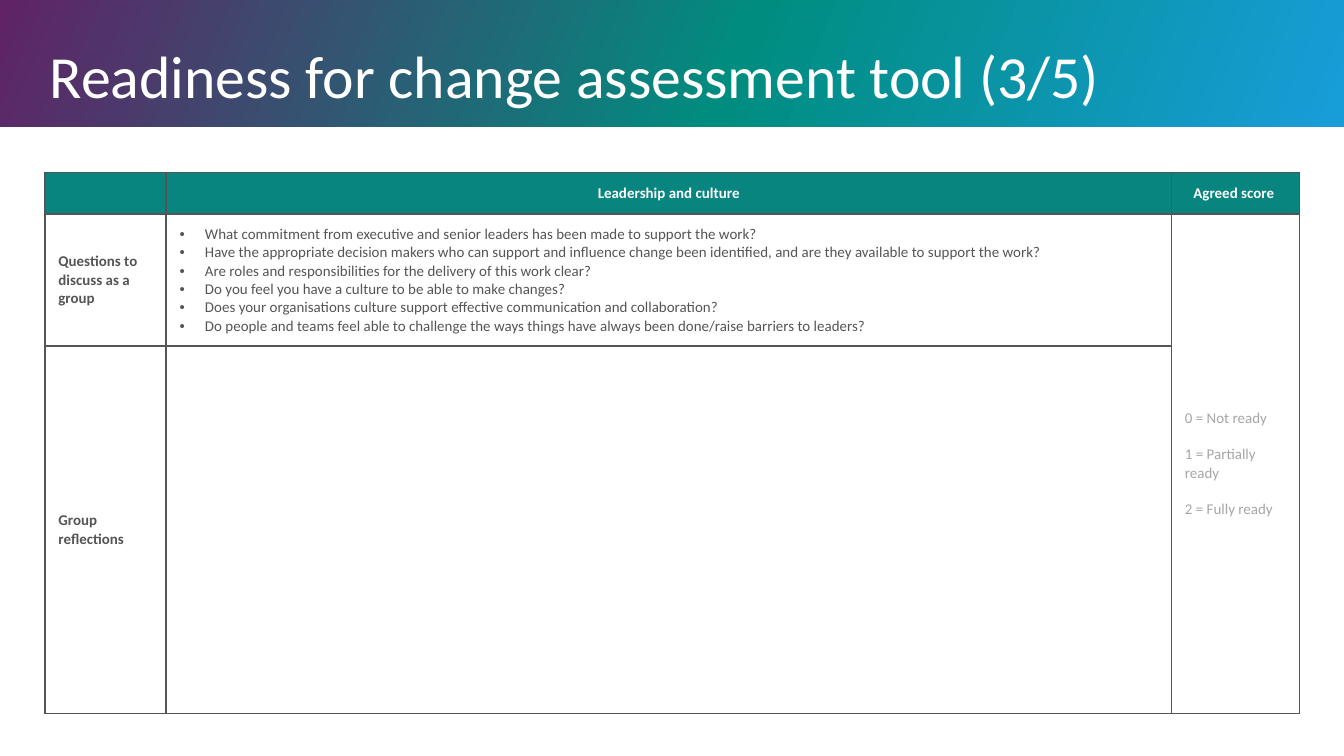
from copy import deepcopy
from lxml.etree import SubElement
from pptx import Presentation
from pptx.dml.color import RGBColor
from pptx.enum.shapes import MSO_SHAPE
from pptx.enum.text import MSO_ANCHOR, MSO_AUTO_SIZE, PP_ALIGN
from pptx.oxml.ns import qn
from pptx.util import Cm, Pt


def color(value):
    return RGBColor.from_string(value)


def fill_cell(cell, lines, text_color, bold=False, alignment=PP_ALIGN.LEFT, bullets=False, gap=0):
    cell.vertical_anchor = MSO_ANCHOR.MIDDLE
    cell.text_frame.text = "\n".join(lines)
    for index, paragraph in enumerate(cell.text_frame.paragraphs):
        paragraph.alignment = alignment
        if index and gap:
            paragraph.space_before = Pt(gap)
        if bullets:
            properties = paragraph._p.get_or_add_pPr()
            properties.set("marL", str(Cm(0.48)))
            properties.set("indent", str(-Cm(0.48)))
            SubElement(properties, qn("a:buFont")).set("typeface", "Arial")
            SubElement(properties, qn("a:buChar")).set("char", "•")
        for run in paragraph.runs:
            run.font.name = "Calibri"
            run.font.size = Pt(8)
            run.font.bold = bold
            run.font.color.rgb = color(text_color)
        if not paragraph.runs:
            SubElement(paragraph._p, qn("a:endParaRPr")).set("sz", "800")


WHITE, GRAY, PALE_GRAY, TEAL = "FFFFFF", "565456", "A6A6A6", "08857E"

presentation = Presentation()
presentation.slide_width = Cm(25.4)
presentation.slide_height = Cm(14.29)
slide = presentation.slides.add_slide(presentation.slide_layouts[5])

title = slide.shapes.title
title.left, title.top, title.width, title.height = Cm(0.94), Cm(0.89), Cm(23.57), Cm(1.04)
title_frame = title.text_frame
title_frame.text = "Readiness for change assessment tool (3/5)"
title_frame.auto_size = MSO_AUTO_SIZE.NONE
title_frame.vertical_anchor = MSO_ANCHOR.MIDDLE
title_frame.margin_left = title_frame.margin_right = 0
title_frame.margin_top = title_frame.margin_bottom = 0
paragraph = title_frame.paragraphs[0]
paragraph.alignment = PP_ALIGN.LEFT
title_font = paragraph.runs[0].font
title_font.name = "Calibri"
title_font.size = Pt(32)
title_font.color.rgb = color(WHITE)

banner = slide.shapes.add_shape(MSO_SHAPE.RECTANGLE, 0, 0, Cm(25.4), Cm(2.4))
banner.shadow.inherit = False
banner.line.fill.background()
banner.fill.gradient()
banner.fill.gradient_angle = 338
stop_list = next(banner.element.iter(qn("a:gsLst")))
stop_list.append(deepcopy(stop_list[0]))
banner_stops = [(0, "602365"), (0.55, "008D80"), (1, "189DD9")]
for stop, (position, value) in zip(banner.fill.gradient_stops, banner_stops):
    stop.position = position
    stop.color.rgb = color(value)
title.element.addprevious(banner.element)

column_widths = [2.29, 19, 2.42]
row_heights = [0.79, 2.49, 6.95]
table = slide.shapes.add_table(
    3, 3, Cm(0.85), Cm(3.26), Cm(sum(column_widths)), Cm(sum(row_heights))
).table
table.first_row = False
table.horz_banding = False
for column, width in zip(table.columns, column_widths):
    column.width = Cm(width)
for row, height in zip(table.rows, row_heights):
    row.height = Cm(height)

for row_index, row in enumerate(table.rows):
    for cell in row.cells:
        cell_properties = cell._tc.get_or_add_tcPr()
        for side in ("a:lnL", "a:lnR", "a:lnT", "a:lnB"):
            border = SubElement(cell_properties, qn(side), w=str(Pt(1)))
            border_fill = SubElement(border, qn("a:solidFill"))
            SubElement(border_fill, qn("a:srgbClr"), val=GRAY)
        if row_index == 0:
            cell.fill.solid()
            cell.fill.fore_color.rgb = color(TEAL)
        else:
            cell.fill.background()
table.cell(1, 2).merge(table.cell(2, 2))

for index, heading in enumerate(["", "Leadership and culture", "Agreed score "]):
    fill_cell(table.cell(0, index), [heading], WHITE, bold=True, alignment=PP_ALIGN.CENTER)
for index, label in enumerate(["Questions to discuss as a group", "Group reflections"], 1):
    fill_cell(table.cell(index, 0), [label], GRAY, bold=True)

questions = [
    "What commitment from executive and senior leaders has been made to support the work?",
    "Have the appropriate decision makers who can support and influence change been identified, "
    "and are they available to support the work?",
    "Are roles and responsibilities for the delivery of this work clear?",
    "Do you feel you have a culture to be able to make changes?",
    "Does your organisations culture support effective communication and collaboration?",
    "Do people and teams feel able to challenge the ways things have always been done/raise "
    "barriers to leaders?",
]
fill_cell(table.cell(1, 1), questions, GRAY, bullets=True)
fill_cell(table.cell(2, 1), [""], GRAY)
scores = ["0 = Not ready", "1 = Partially ready", "2 = Fully ready"]
fill_cell(table.cell(1, 2), scores, PALE_GRAY, gap=9.8)

presentation.save("out.pptx")
